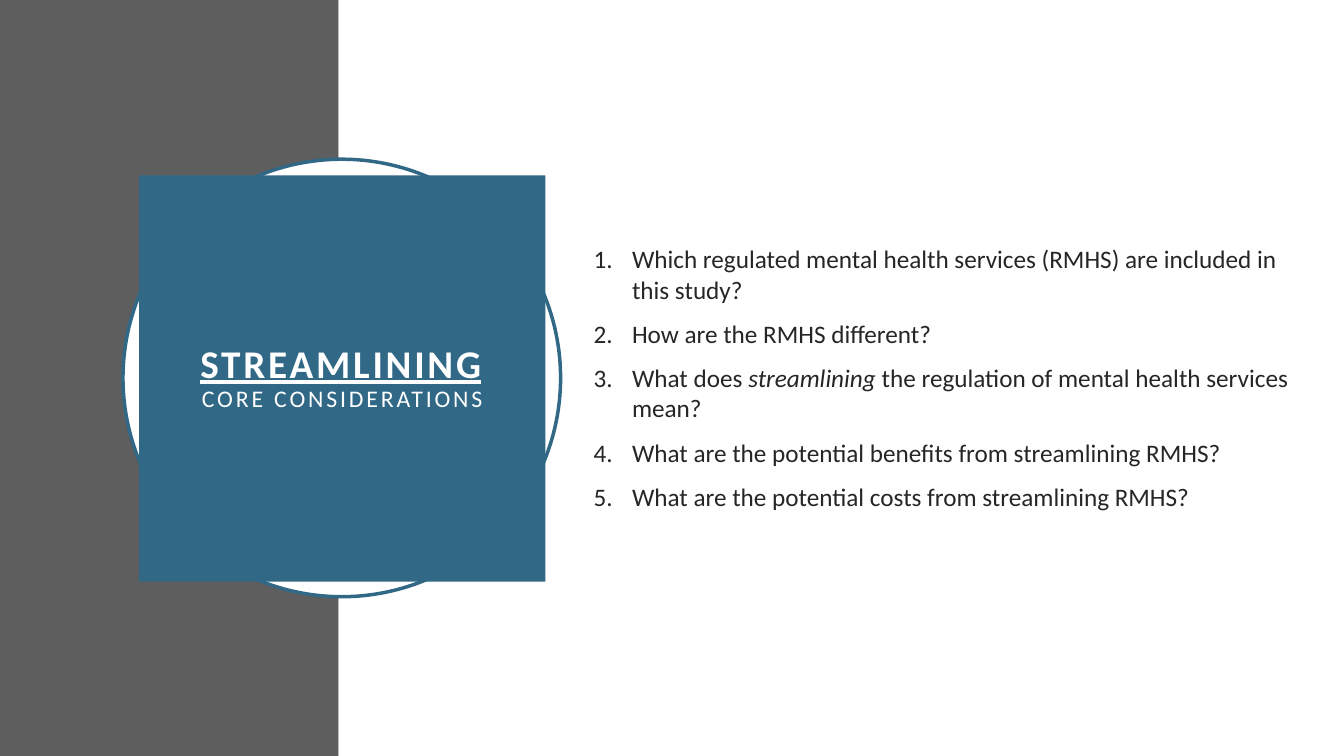
"""Build the slide on the core considerations of streamlining."""
import dataclasses
import typing

import lxml.etree
import pptx
import pptx.dml.color
import pptx.enum.shapes
import pptx.enum.text
import pptx.oxml.ns
import pptx.presentation
import pptx.shapes.autoshape
import pptx.slide
import pptx.text.text
import pptx.util

Inches = pptx.util.Inches
SHAPES = pptx.enum.shapes.MSO_SHAPE
COLORS = {"gray": "5E5E5E", "white": "FFFFFF", "blue": "316886", "ink": "262626"}
FONT_NAME = "Calibri"
HANGING_INDENT = Inches(0.38)


@dataclasses.dataclass(frozen=True)
class Panel:
    kind: pptx.enum.shapes.MSO_SHAPE
    left: float
    top: float
    width: float
    height: float
    fill: str
    outline: typing.Optional[str] = None


@dataclasses.dataclass(frozen=True)
class Span:
    text: str
    size: float = 18
    color: str = "ink"
    bold: bool = False
    italic: bool = False
    underline: bool = False
    spacing: int = 0


BACKDROP = [
    Panel(SHAPES.RECTANGLE, 0, 0, 3.36, 7.5, "gray"),
    Panel(SHAPES.RECTANGLE, 3.36, 0, 9.97, 7.5, "white"),
    Panel(SHAPES.OVAL, 1.22, 1.58, 4.34, 4.34, "white", "blue"),
]
TITLE_PANEL = Panel(SHAPES.RECTANGLE, 1.38, 1.74, 4.03, 4.03, "blue")
TITLE = [
    Span("STREAMLINING", 28, "white", bold=True, underline=True, spacing=200),
    Span("CORE CONSIDERATIONS", 17, "white", spacing=200),
]
QUESTIONS = [
    [Span("Which regulated mental health services (RMHS) are included in this study?")],
    [Span("How are the RMHS different?")],
    [
        Span("What does "),
        Span("streamlining", italic=True),
        Span(" the regulation of mental health services mean?"),
    ],
    [Span("What are the potential benefits from streamlining RMHS?")],
    [Span("What are the potential costs from streamlining RMHS?")],
]


def rgb(name: str) -> pptx.dml.color.RGBColor:
    return pptx.dml.color.RGBColor.from_string(COLORS[name])


def apply_format(target: object, values: dict[str, object]) -> None:
    for name, value in values.items():
        setattr(target, name, value)


def add_panel(slide: pptx.slide.Slide, panel: Panel) -> pptx.shapes.autoshape.Shape:
    box = map(Inches, (panel.left, panel.top, panel.width, panel.height))
    shape = slide.shapes.add_shape(panel.kind, *box)
    shape.shadow.inherit = False
    shape.fill.solid()
    shape.fill.fore_color.rgb = rgb(panel.fill)
    if panel.outline:
        shape.line.color.rgb = rgb(panel.outline)
        shape.line.width = pptx.util.Pt(2.5)
    else:
        shape.line.fill.background()
    return shape


def add_span(paragraph: pptx.text.text._Paragraph, span: Span) -> None:
    run = paragraph.add_run()
    run.text = span.text
    apply_format(run.font, {
        "name": FONT_NAME,
        "size": pptx.util.Pt(span.size),
        "bold": span.bold,
        "italic": span.italic,
        "underline": span.underline,
    })
    run.font.color.rgb = rgb(span.color)
    if span.spacing:
        run.font._element.set("spc", str(span.spacing))


def add_title(slide: pptx.slide.Slide) -> None:
    frame = add_panel(slide, TITLE_PANEL).text_frame
    margins = ("margin_left", "margin_top", "margin_right", "margin_bottom")
    apply_format(frame, {
        **dict.fromkeys(margins, Inches(0.2)),
        "word_wrap": False,
        "vertical_anchor": pptx.enum.text.MSO_ANCHOR.MIDDLE,
    })
    paragraph = frame.paragraphs[0]
    apply_format(paragraph, {
        "alignment": pptx.enum.text.PP_ALIGN.CENTER,
        "line_spacing": 0.9,
    })
    heading, subheading = TITLE
    add_span(paragraph, heading)
    paragraph.add_line_break()
    add_span(paragraph, subheading)


def number_paragraph(paragraph: pptx.text.text._Paragraph) -> None:
    properties = paragraph._p.get_or_add_pPr()
    properties.set("marL", str(HANGING_INDENT))
    properties.set("indent", str(-HANGING_INDENT))
    tag = pptx.oxml.ns.qn("a:buAutoNum")
    lxml.etree.SubElement(properties, tag, type="arabicPeriod")


def add_questions(slide: pptx.slide.Slide) -> None:
    box = map(Inches, (5.79, 1.53, 7.22, 4.43))
    frame = slide.shapes.add_textbox(*box).text_frame
    apply_format(frame, {
        "word_wrap": True,
        "vertical_anchor": pptx.enum.text.MSO_ANCHOR.MIDDLE,
    })
    for index, spans in enumerate(QUESTIONS):
        paragraph = frame.add_paragraph() if index else frame.paragraphs[0]
        paragraph.space_before = pptx.util.Pt(10)
        number_paragraph(paragraph)
        for span in spans:
            add_span(paragraph, span)


def main() -> None:
    presentation = pptx.Presentation()
    apply_format(presentation, {
        "slide_width": Inches(13.33),
        "slide_height": Inches(7.5),
    })
    slide = presentation.slides.add_slide(presentation.slide_layouts[6])
    for panel in BACKDROP:
        add_panel(slide, panel)
    add_title(slide)
    add_questions(slide)
    presentation.save("out.pptx")


if __name__ == "__main__":
    main()
